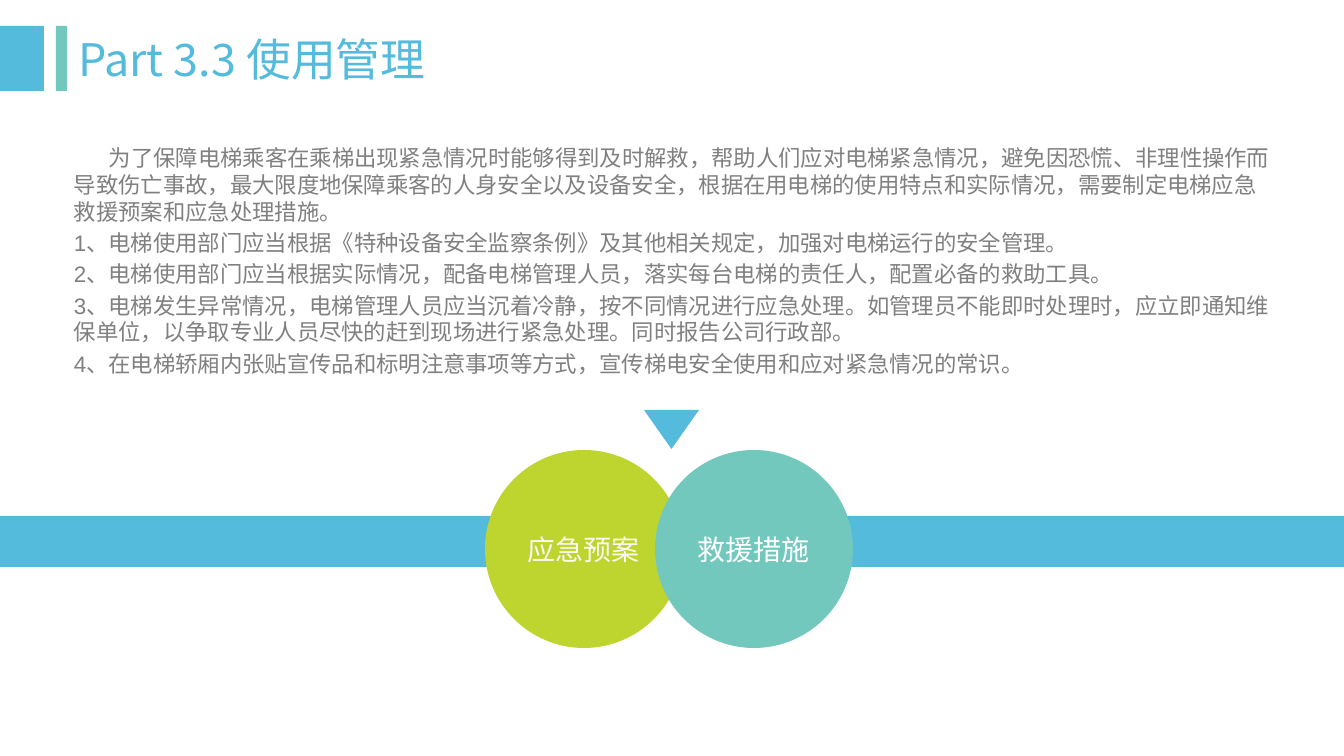
import pptx
import pptx.dml.color
import pptx.enum.shapes
import pptx.enum.text
import pptx.oxml.ns
import pptx.util

PX = 914400 / 100.8
COLORS = {"blue": "54BBDC", "teal": "73C8BE", "lime": "BED52F",
          "gray": "808080", "cream": "FAF8F5", "white": "FFFFFF"}
SHAPES = pptx.enum.shapes.MSO_SHAPE
ALIGN = pptx.enum.text.PP_ALIGN
ANCHOR = pptx.enum.text.MSO_ANCHOR

GUIDELINES = [
    "为了保障电梯乘客在乘梯出现紧急情况时能够得到及时解救，帮助人们应对电梯紧急情况，避免因恐慌、非理性操作而导致伤亡事故，最大限度地保障乘客的人身安全以及设备安全，根据在用电梯的使用特点和实际情况，需要制定电梯应急救援预案和应急处理措施。",
    "1、电梯使用部门应当根据《特种设备安全监察条例》及其他相关规定，加强对电梯运行的安全管理。",
    "2、电梯使用部门应当根据实际情况，配备电梯管理人员，落实每台电梯的责任人，配置必备的救助工具。",
    "3、电梯发生异常情况，电梯管理人员应当沉着冷静，按不同情况进行应急处理。如管理员不能即时处理时，应立即通知维保单位，以争取专业人员尽快的赶到现场进行紧急处理。同时报告公司行政部。",
    "4、在电梯轿厢内张贴宣传品和标明注意事项等方式，宣传梯电安全使用和应对紧急情况的常识。",
]


def px(length):
    """Turn px into EMU."""
    return pptx.util.Emu(round(length * PX))


def rgb(color):
    """Look up a named colour."""
    return pptx.dml.color.RGBColor.from_string(COLORS[color])


def set_all(target, values):
    """Set each attribute of target from a dict."""
    for name, value in values.items():
        setattr(target, name, value)


def write(paragraph, text, size, color, font="Arial", **layout):
    """Fill a paragraph with one formatted run."""
    set_all(paragraph, layout)
    run = paragraph.add_run()
    run.text = text
    set_all(run.font, {"size": pptx.util.Pt(size), "name": font})
    run.font.color.rgb = rgb(color)
    return run


def add_block(slide, kind, box, color):
    """Add a plain filled shape."""
    block = slide.shapes.add_shape(kind, *map(px, box))
    block.shadow.inherit = False
    block.fill.solid()
    block.fill.fore_color.rgb = rgb(color)
    block.line.fill.background()
    return block


def add_circle(slide, left, color, label, label_color):
    """Add a labelled circle."""
    circle = add_block(slide, SHAPES.OVAL, (left, 450, 198, 198), color)
    set_all(circle.text_frame, {"word_wrap": False, "vertical_anchor": ANCHOR.MIDDLE})
    write(circle.text_frame.paragraphs[0], label, 20, label_color, alignment=ALIGN.CENTER)


def add_title(slide, text):
    """Place and format the title placeholder."""
    title = slide.shapes.title
    set_all(title, dict(zip(("left", "top", "width", "height"), map(px, (68, 26, 1210, 65)))))
    set_all(title.text_frame, {"word_wrap": True, "vertical_anchor": ANCHOR.MIDDLE})
    font = "Noto Sans CJK SC"
    run = write(title.text_frame.paragraphs[0], text, 32, "blue", font, alignment=ALIGN.LEFT)
    east_asian = run.font._element.makeelement(pptx.oxml.ns.qn("a:ea"), {"typeface": font})
    run.font._element.append(east_asian)


def add_guidelines(slide):
    """Add the introduction and the numbered rules."""
    frame = slide.shapes.add_textbox(*map(px, (64, 139, 1218, 235))).text_frame
    frame.word_wrap = True
    for number, text in enumerate(GUIDELINES):
        paragraph = frame.add_paragraph() if number else frame.paragraphs[0]
        write(paragraph, text, 16, "gray", space_before=pptx.util.Pt(3.2 if number else 0))
    frame.paragraphs[0]._p.get_or_add_pPr().set("indent", str(px(35)))


def main():
    """Build the elevator management slide."""
    deck = pptx.Presentation()
    set_all(deck, {"slide_width": px(1344), "slide_height": px(756)})
    slide = deck.slides.add_slide(deck.slide_layouts[5])
    add_block(slide, SHAPES.RECTANGLE, (0, 26, 44, 65), "blue")
    add_block(slide, SHAPES.RECTANGLE, (56, 26, 11, 65), "teal")
    add_block(slide, SHAPES.RECTANGLE, (0, 516, 1344, 51), "blue")
    add_guidelines(slide)
    add_title(slide, "Part 3.3 使用管理")
    add_circle(slide, 485, "lime", "应急预案", "cream")
    add_circle(slide, 655, "teal", "救援措施", "white")
    add_block(slide, SHAPES.FLOWCHART_MERGE, (644, 410, 55, 39), "blue")
    deck.save("out.pptx")


if __name__ == "__main__":
    main()
